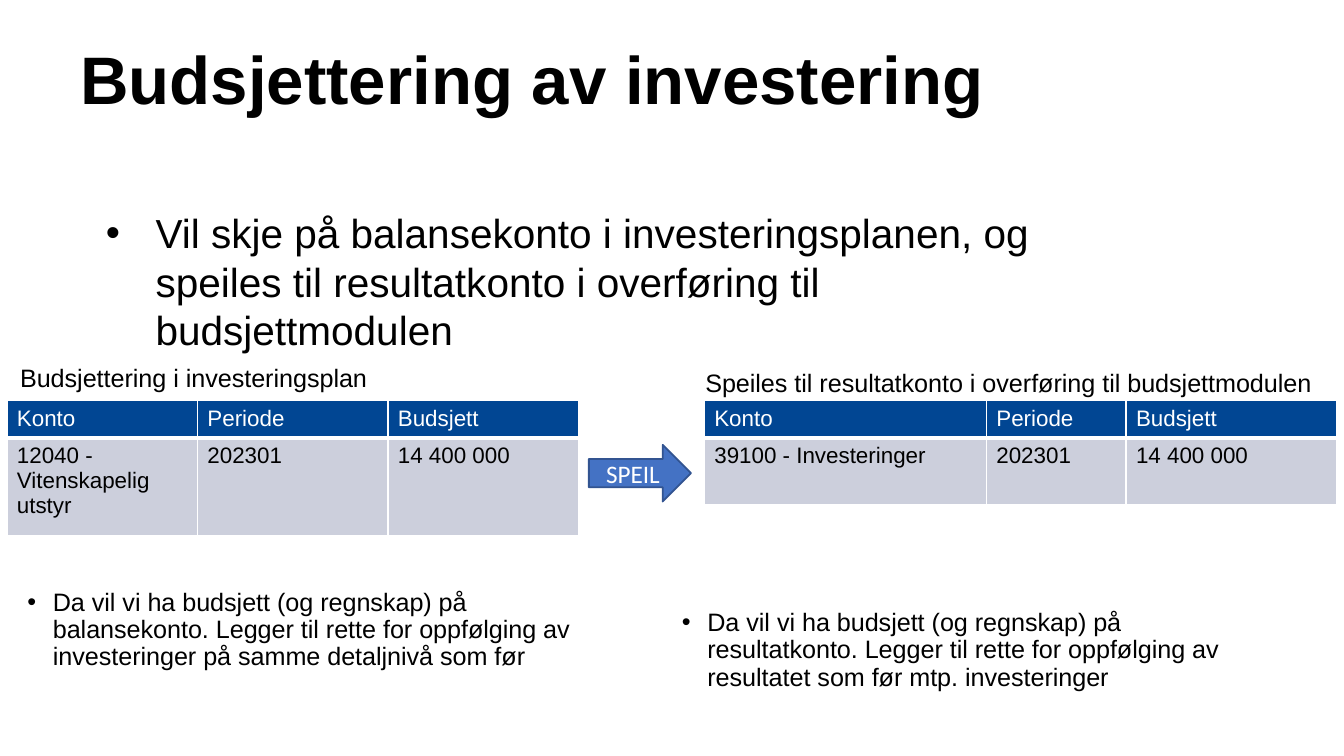
from dataclasses import dataclass

import pptx
import pptx.dml.color
import pptx.enum.shapes
import pptx.enum.text
import pptx.oxml
import pptx.oxml.ns
import pptx.util
from pptx.dml.color import RGBColor
from pptx.util import Cm, Pt

BLACK = RGBColor(0x00, 0x00, 0x00)
WHITE = RGBColor(0xFF, 0xFF, 0xFF)
HEADER_BLUE = RGBColor(0x01, 0x46, 0x93)
ROW_GREY = RGBColor(0xCC, 0xCF, 0xDC)
ARROW_BLUE = RGBColor(0x44, 0x72, 0xC4)
ARROW_EDGE = RGBColor(0x32, 0x54, 0x91)
TIGHT_X, TIGHT_Y = Cm(0.19), Cm(0.1)


@dataclass(frozen=True)
class TextBlock:
    text: str
    left: float
    top: float
    width: float
    height: float
    size: float = 13.5
    bold: bool = False
    wrap: bool = True
    bullet_indent: float = 0
    line_spacing: float = 1.0
    tight: bool = False


@dataclass(frozen=True)
class BudgetTable:
    account: str
    left: float
    columns: tuple[float, ...]
    row_height: float


TEXTS = (
    TextBlock("Budsjettering av investering", 1.27, 0.58, 22.86, 1.8, size=36, bold=True),
    TextBlock("Vil skje på balansekonto i investeringsplanen, og speiles til "
              "resultatkonto i overføring til budsjettmodulen",
              1.75, 3.81, 18.62, 2.62, size=21.7, bullet_indent=0.94),
    TextBlock("Da vil vi ha budsjett (og regnskap) på balansekonto. Legger til rette "
              "for oppfølging av investeringer på samme detaljnivå som før",
              0.33, 11.05, 10.8, 2.62, bullet_indent=0.48, line_spacing=0.9, tight=True),
    TextBlock("Da vil vi ha budsjett (og regnskap) på resultatkonto. Legger til rette "
              "for oppfølging av resultatet som før mtp. investeringer",
              12.7, 11.43, 10.8, 2.62, bullet_indent=0.48, line_spacing=0.9, tight=True),
    TextBlock("Budsjettering i investeringsplan", 0.13, 6.73, 7.16, 0.84, wrap=False),
    TextBlock("Speiles til resultatkonto i overføring til budsjettmodulen",
              13.08, 6.81, 12.14, 0.84, wrap=False),
)
TABLES = (
    BudgetTable("12040 - Vitenskapelig utstyr", 0.13, (3.6, 3.6, 3.6), 1.85),
    BudgetTable("39100 - Investeringer", 13.31, (5.33, 2.64, 3.99), 1.27),
)
TABLE_TOP, HEADER_HEIGHT = 7.57, 0.7
HEADINGS = ("Konto", "Periode", "Budsjett")
PERIOD_AND_BUDGET = ("202301", "14 400 000")


def style(paragraph, size: float, color: RGBColor, name: str = "Arial", bold: bool = False) -> None:
    for run in paragraph.runs:
        run.font.size = Pt(size)
        run.font.name = name
        run.font.bold = bold
        run.font.color.rgb = color


def add_bullet(paragraph, indent: float) -> None:
    properties = paragraph._p.get_or_add_pPr()
    properties.set("marL", str(Cm(indent)))
    properties.set("indent", str(-Cm(indent)))
    for tag, key, value in (("a:buFont", "typeface", "Arial"), ("a:buChar", "char", "•")):
        mark = pptx.oxml.xmlchemy.OxmlElement(tag)
        mark.set(key, value)
        properties.append(mark)


def add_text(slide, block: TextBlock) -> None:
    box = slide.shapes.add_textbox(Cm(block.left), Cm(block.top), Cm(block.width), Cm(block.height))
    frame = box.text_frame
    frame.word_wrap = block.wrap
    if block.tight:
        frame.margin_left = frame.margin_right = TIGHT_X
        frame.margin_top = frame.margin_bottom = TIGHT_Y
    frame.text = block.text
    paragraph = frame.paragraphs[0]
    if block.bullet_indent:
        add_bullet(paragraph, block.bullet_indent)
    paragraph.line_spacing = block.line_spacing
    style(paragraph, block.size, BLACK, bold=block.bold)


def add_borders(cell, bottom_width: float) -> None:
    """Draw white borders; they have to precede the fill in the cell properties."""
    properties = cell._tc.get_or_add_tcPr()
    sides = (("L", 1), ("R", 1), ("T", 1), ("B", bottom_width))
    for position, (side, width) in enumerate(sides):
        border = pptx.oxml.parse_xml(
            f'<a:ln{side} {pptx.oxml.ns.nsdecls("a")} w="{Pt(width)}">'
            f'<a:solidFill><a:srgbClr val="{WHITE}"/></a:solidFill></a:ln{side}>')
        properties.insert(position, border)


def add_table(slide, budget: BudgetTable) -> None:
    rows = (HEADINGS, (budget.account, *PERIOD_AND_BUDGET))
    heights = (HEADER_HEIGHT, budget.row_height)
    table = slide.shapes.add_table(
        len(rows), len(HEADINGS), Cm(budget.left), Cm(TABLE_TOP),
        Cm(sum(budget.columns)), Cm(sum(heights))).table
    for column, width in zip(table.columns, budget.columns):
        column.width = Cm(width)
    for row, height in zip(table.rows, heights):
        row.height = Cm(height)
    looks = ((HEADER_BLUE, WHITE, 3), (ROW_GREY, BLACK, 1))
    for r, (values, (fill, color, bottom_width)) in enumerate(zip(rows, looks)):
        for c, value in enumerate(values):
            cell = table.cell(r, c)
            cell.text = value
            cell.margin_left = cell.margin_right = TIGHT_X
            cell.margin_top = cell.margin_bottom = TIGHT_Y
            cell.fill.solid()
            cell.fill.fore_color.rgb = fill
            add_borders(cell, bottom_width)
            style(cell.text_frame.paragraphs[0], 12, color)


def add_mirror_arrow(slide) -> None:
    arrow = slide.shapes.add_shape(
        pptx.enum.shapes.MSO_SHAPE.RIGHT_ARROW, Cm(11.13), Cm(8.41), Cm(1.93), Cm(1.07))
    arrow.shadow.inherit = False
    arrow.fill.solid()
    arrow.fill.fore_color.rgb = ARROW_BLUE
    arrow.line.color.rgb = ARROW_EDGE
    arrow.line.width = Pt(1)
    frame = arrow.text_frame
    frame.text = "SPEIL"
    frame.word_wrap = True
    frame.vertical_anchor = pptx.enum.text.MSO_ANCHOR.MIDDLE
    frame.paragraphs[0].alignment = pptx.enum.text.PP_ALIGN.CENTER
    style(frame.paragraphs[0], 13.5, WHITE, name="Calibri")


def main() -> None:
    presentation = pptx.Presentation()
    presentation.slide_width, presentation.slide_height = Cm(25.4), Cm(14.29)
    slide = presentation.slides.add_slide(presentation.slide_layouts[6])
    for block in TEXTS:
        add_text(slide, block)
    for budget in TABLES:
        add_table(slide, budget)
    add_mirror_arrow(slide)
    presentation.save("out.pptx")


if __name__ == "__main__":
    main()
